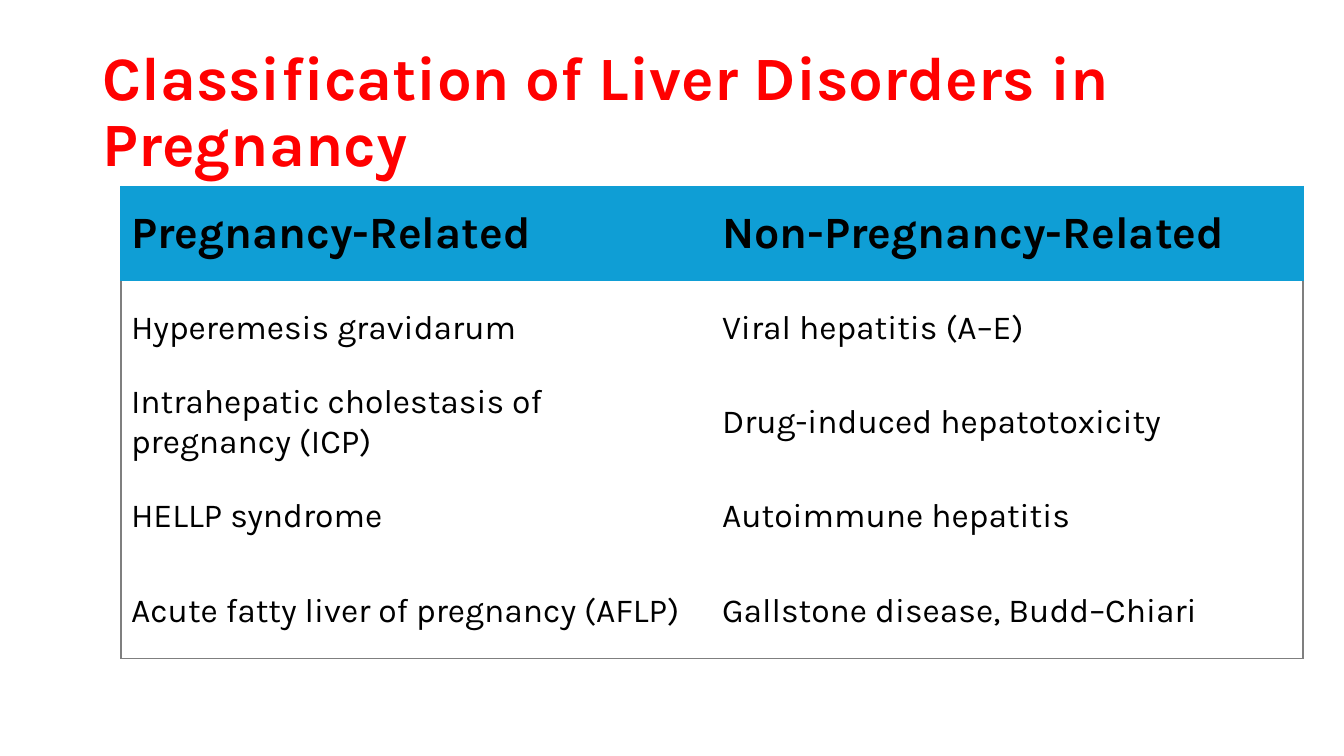
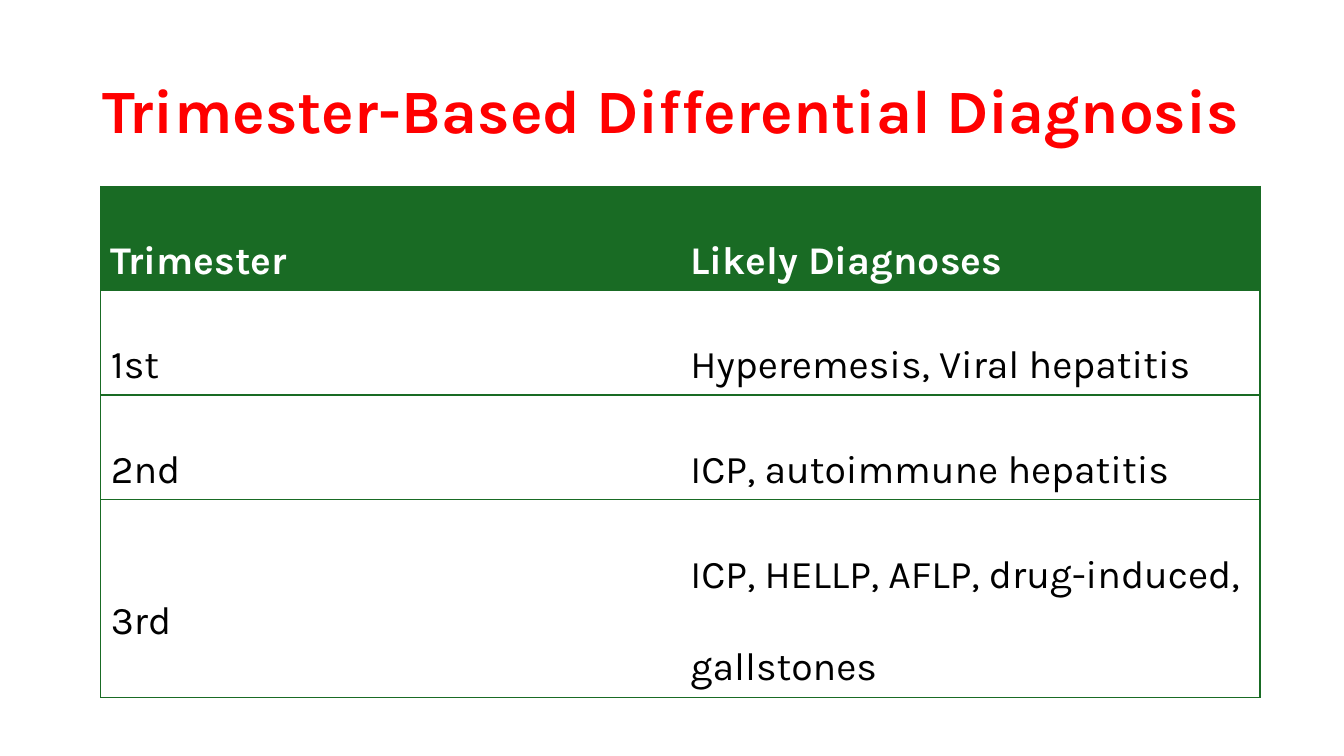
"""Build two slides on liver disorders in pregnancy, each a title over a table."""
from dataclasses import dataclass

from lxml import etree
from pptx import Presentation
from pptx.dml.color import RGBColor
from pptx.enum.text import MSO_ANCHOR
from pptx.oxml.ns import qn
from pptx.util import Pt

MIDDLE = MSO_ANCHOR.MIDDLE


@dataclass(frozen=True)
class Theme:
    font: str = "Karla"
    title: str = "FF0000"
    text: str = "000000"
    paper: str = "FFFFFF"
    blue: str = "0F9ED5"
    green: str = "196B24"
    grey: str = "7F7F7F"
    title_size: int = 44
    line: int = 1


T = Theme()


def write(tf, text, *, size, color, bold=False, spacing=1.0):
    p = tf.paragraphs[0]
    p.line_spacing = spacing
    r = p.add_run()
    r.text = text
    r.font.name = T.font
    r.font.size = Pt(size)
    r.font.bold = bold
    r.font.color.rgb = RGBColor.from_string(color)


def set_borders(cell, colors):
    tc_pr = cell._tc.get_or_add_tcPr()
    for side, color in colors.items():
        ln = etree.SubElement(tc_pr, qn(f"a:ln{side}"), w=str(Pt(T.line)))
        if color:
            fill = etree.SubElement(ln, qn("a:solidFill"))
            etree.SubElement(fill, qn("a:srgbClr"), val=color)
        else:
            etree.SubElement(ln, qn("a:noFill"))


slides = [
    dict(
        title="Classification of Liver Disorders in Pregnancy",
        title_width=864.7, left=86.4, width=844.4, heights=[67.4] * 5,
        accent=T.blue, outline=T.grey, row_lines=False,
        head_color=T.text, head_size=32, body_size=24, spacing=1.0,
        rows=[
            ("Pregnancy-Related", "Non-Pregnancy-Related"),
            ("Hyperemesis gravidarum", "Viral hepatitis (A–E)"),
            ("Intrahepatic cholestasis of pregnancy (ICP)", "Drug-induced hepatotoxicity"),
            ("HELLP syndrome", "Autoimmune hepatitis"),
            ("Acute fatty liver of pregnancy (AFLP)", "Gallstone disease, Budd–Chiari"),
        ],
    ),
    dict(
        title="Trimester-Based Differential Diagnosis",
        title_width=828, left=72, width=828, heights=[72.6] * 3 + [138],
        accent=T.green, outline=T.green, row_lines=True,
        head_color=T.paper, head_size=28, body_size=28, spacing=2.0,
        rows=[
            ("Trimester", "Likely Diagnoses"),
            ("1st", "Hyperemesis, Viral hepatitis"),
            ("2nd", "ICP, autoimmune hepatitis"),
            ("3rd", "ICP, HELLP, AFLP, drug-induced, gallstones"),
        ],
    ),
]

prs = Presentation()
prs.slide_width, prs.slide_height = Pt(960), Pt(540)
blank = prs.slide_layouts[6]

for d in slides:
    s = prs.slides.add_slide(blank)
    sp = s.shapes.add_textbox(Pt(66), Pt(28.8), Pt(d["title_width"]), Pt(104.4))
    tf = sp.text_frame
    tf.word_wrap = True
    tf.vertical_anchor = MIDDLE
    write(tf, d["title"], size=T.title_size, color=T.title, bold=True, spacing=0.9)

    rows = d["rows"]
    table = s.shapes.add_table(
        len(rows), 2, Pt(d["left"]), Pt(133.2), Pt(d["width"]), Pt(sum(d["heights"]))
    ).table
    table.first_row = table.horz_banding = False
    for col in table.columns:
        col.width = Pt(d["width"] / 2)

    for i, texts in enumerate(rows):
        table.rows[i].height = Pt(d["heights"][i])
        head, last = i == 0, i == len(rows) - 1
        edge = d["accent"] if head else d["outline"]
        for j, text in enumerate(texts):
            cell = table.cell(i, j)
            cell.vertical_anchor = MIDDLE
            set_borders(cell, {
                "L": edge if j == 0 else None,
                "R": edge if j == 1 else None,
                "T": edge if head or d["row_lines"] else None,
                "B": edge if last or d["row_lines"] else None,
            })
            cell.fill.solid()
            cell.fill.fore_color.rgb = RGBColor.from_string(d["accent"] if head else T.paper)
            write(
                cell.text_frame, text,
                size=d["head_size"] if head else d["body_size"],
                color=d["head_color"] if head else T.text,
                bold=head, spacing=d["spacing"],
            )

prs.save("out.pptx")
